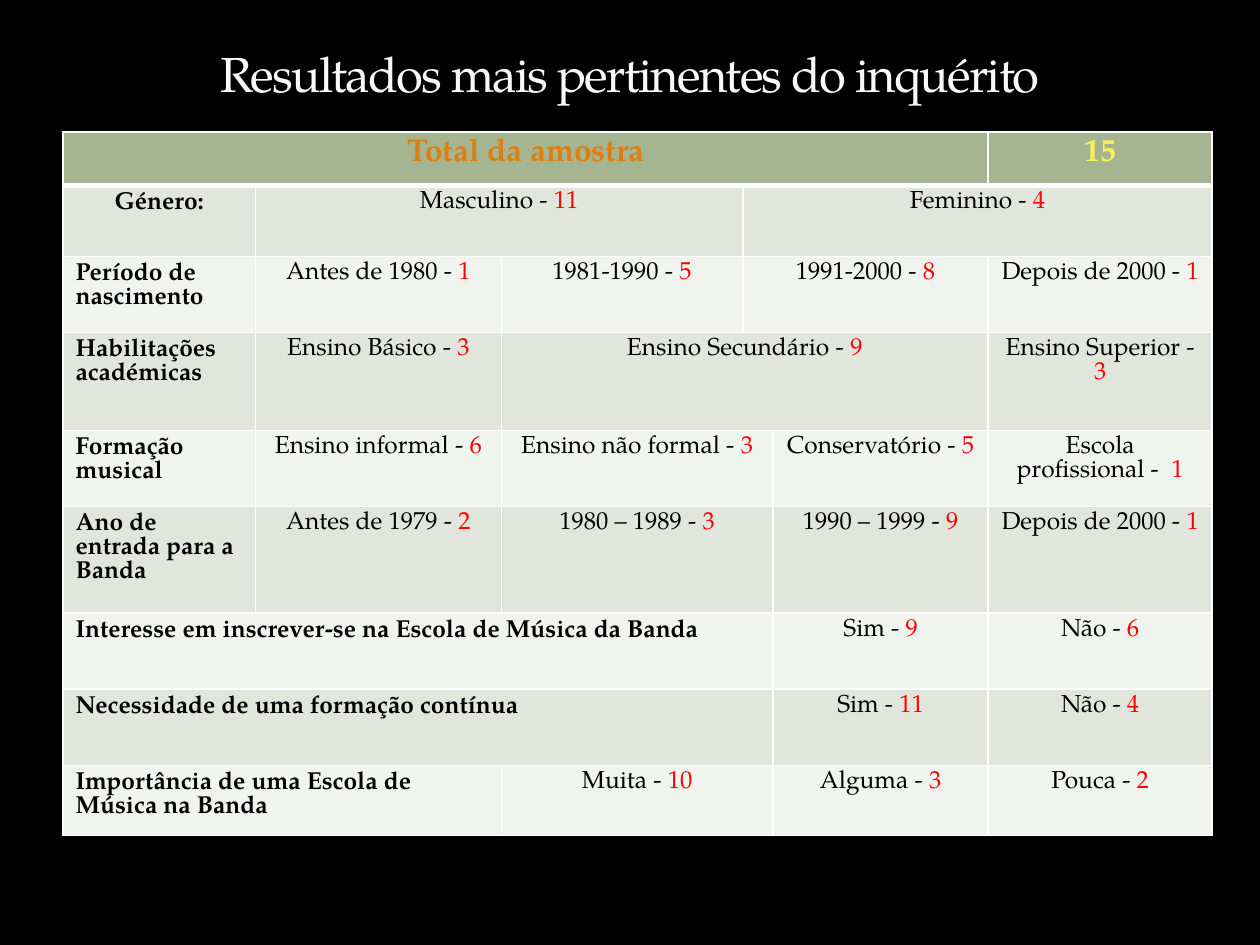
import pptx
import pptx.util
import pptx.dml.color
import pptx.enum.text
import pptx.oxml.ns
from dataclasses import dataclass
from lxml import etree

Pt = pptx.util.Pt
ALIGN = pptx.enum.text.PP_ALIGN


@dataclass(frozen=True)
class Theme:
    font: str = "TeX Gyre Pagella"
    background: str = "000000"
    title: str = "F9F9F9"
    title_outline: str = "3C4422"
    header: str = "A5B592"
    header_text: str = "DD7E0E"
    header_count: str = "FCF059"
    bands: tuple = ("E1E5DC", "F0F3EE")
    text: str = "000000"
    count: str = "FF0000"
    border: str = "FFFFFF"
    title_size: float = 28
    header_size: float = 18
    body_size: float = 14


THEME = Theme()

COLUMN_WIDTHS = [110, 140.5, 138, 9.5, 123, 128]
ROW_HEIGHTS = [30.5, 40.5, 43.5, 56, 43.5, 61, 43.5, 43.5, 40]

# Each row: question, columns it covers, then (answer, count, columns covered)
SURVEY = [
    ("Género:", 1, [("Masculino - ", 11, 2), ("Feminino - ", 4, 3)]),
    ("Período de nascimento", 1, [("Antes de 1980 - ", 1, 1), ("1981-1990 - ", 5, 1),
                                  ("1991-2000 - ", 8, 2), ("Depois de 2000 - ", 1, 1)]),
    ("Habilitações académicas", 1, [("Ensino Básico - ", 3, 1), ("Ensino Secundário - ", 9, 3),
                                    ("Ensino Superior - ", 3, 1)]),
    ("Formação musical", 1, [("Ensino informal - ", 6, 1), ("Ensino não formal - ", 3, 2),
                             ("Conservatório - ", 5, 1), ("Escola profissional -  ", 1, 1)]),
    ("Ano de entrada para a Banda", 1, [("Antes de 1979 - ", 2, 1), ("1980 – 1989 - ", 3, 2),
                                        ("1990 – 1999 - ", 9, 1), ("Depois de 2000 - ", 1, 1)]),
    ("Interesse em inscrever-se na Escola de Música da Banda", 4,
     [("Sim - ", 9, 1), ("Não - ", 6, 1)]),
    ("Necessidade de uma formação contínua", 4, [("Sim - ", 11, 1), ("Não - ", 4, 1)]),
    ("Importância de uma Escola de Música na Banda", 2,
     [("Muita - ", 10, 2), ("Alguma - ", 3, 1), ("Pouca - ", 2, 1)]),
]


def rgb(value):
    return pptx.dml.color.RGBColor.from_string(value)


def add_text(para, text, *, size=THEME.body_size, color=THEME.text, bold=False):
    span = para.add_run()
    span.text = text
    span.font.name = THEME.font
    span.font.size = Pt(size)
    span.font.bold = bold
    span.font.color.rgb = rgb(color)
    return span


def line_element(tag, width, color, alpha=None):
    line = etree.Element(pptx.oxml.ns.qn(tag), w=str(Pt(width)))
    fill = etree.SubElement(line, pptx.oxml.ns.qn("a:solidFill"))
    tint = etree.SubElement(fill, pptx.oxml.ns.qn("a:srgbClr"), val=color)
    if alpha is not None:
        etree.SubElement(tint, pptx.oxml.ns.qn("a:alpha"), val=str(alpha * 1000))
    return line


def add_title(page, text):
    box = page.shapes.title
    box.left, box.top, box.width, box.height = Pt(36), Pt(12), Pt(648), Pt(50)
    frame = box.text_frame
    frame.word_wrap = True
    frame.vertical_anchor = pptx.enum.text.MSO_ANCHOR.BOTTOM
    para = frame.paragraphs[0]
    para.alignment = ALIGN.CENTER
    span = add_text(para, text, size=THEME.title_size, color=THEME.title)
    # Tight letter spacing and a faint outline
    properties = span.font._element
    properties.set("spc", "-100")
    properties.insert(0, line_element("a:ln", 0.25, THEME.title_outline, alpha=25))


def format_cell(cell, fill, borders):
    """Fill the cell and draw its borders, given as {side: width}."""
    cell.fill.solid()
    cell.fill.fore_color.rgb = rgb(fill)
    properties = cell._tc.get_or_add_tcPr()
    for position, (side, width) in enumerate(borders.items()):
        properties.insert(position, line_element(f"a:ln{side}", width, THEME.border))


def fill_cell(table, row, column, columns, spans, *, align=ALIGN.CENTER, line=13.7):
    """Write (text, format) spans into a cell that covers some columns."""
    cell = table.cell(row, column)
    if columns > 1:
        cell.merge(table.cell(row, column + columns - 1))
    para = cell.text_frame.paragraphs[0]
    para.alignment = align
    para.line_spacing = Pt(line)
    for text, style in spans:
        add_text(para, text, **style)
    return column + columns


def add_survey_table(page):
    frame = page.shapes.add_table(len(ROW_HEIGHTS), len(COLUMN_WIDTHS), Pt(36), Pt(75.5),
                                  Pt(sum(COLUMN_WIDTHS)), Pt(sum(ROW_HEIGHTS)))
    table = frame.table
    table.first_row = table.horz_banding = False
    for column, width in zip(table.columns, COLUMN_WIDTHS):
        column.width = Pt(width)
    for row, height in zip(table.rows, ROW_HEIGHTS):
        row.height = Pt(height)

    # Fills and borders; the rule under the header is thicker
    for index, row in enumerate(table.rows):
        fill = THEME.bands[(index - 1) % 2] if index else THEME.header
        borders = {"L": 1, "R": 1, "T": 3 if index == 1 else 1, "B": 1 if index else 3}
        for cell in row.cells:
            format_cell(cell, fill, borders)

    # Header row
    header = {"size": THEME.header_size, "bold": True}
    column = fill_cell(table, 0, 0, 5, line=17.6,
                       spans=[("Total da amostra", {**header, "color": THEME.header_text})])
    fill_cell(table, 0, column, 1, line=17.6,
              spans=[("15", {**header, "color": THEME.header_count})])

    # Questions and answers
    for row, (question, columns, answers) in enumerate(SURVEY, start=1):
        align = ALIGN.CENTER if row == 1 else ALIGN.LEFT
        column = fill_cell(table, row, 0, columns, [(question, {"bold": True})], align=align)
        for answer, count, columns in answers:
            column = fill_cell(table, row, column, columns,
                               [(answer, {}), (str(count), {"color": THEME.count})])


def main():
    deck = pptx.Presentation()
    deck.slide_width, deck.slide_height = Pt(720), Pt(540)
    page = deck.slides.add_slide(deck.slide_layouts[5])
    page.background.fill.solid()
    page.background.fill.fore_color.rgb = rgb(THEME.background)
    add_survey_table(page)
    add_title(page, "Resultados mais pertinentes do inquérito")
    deck.save("out.pptx")


if __name__ == "__main__":
    main()
